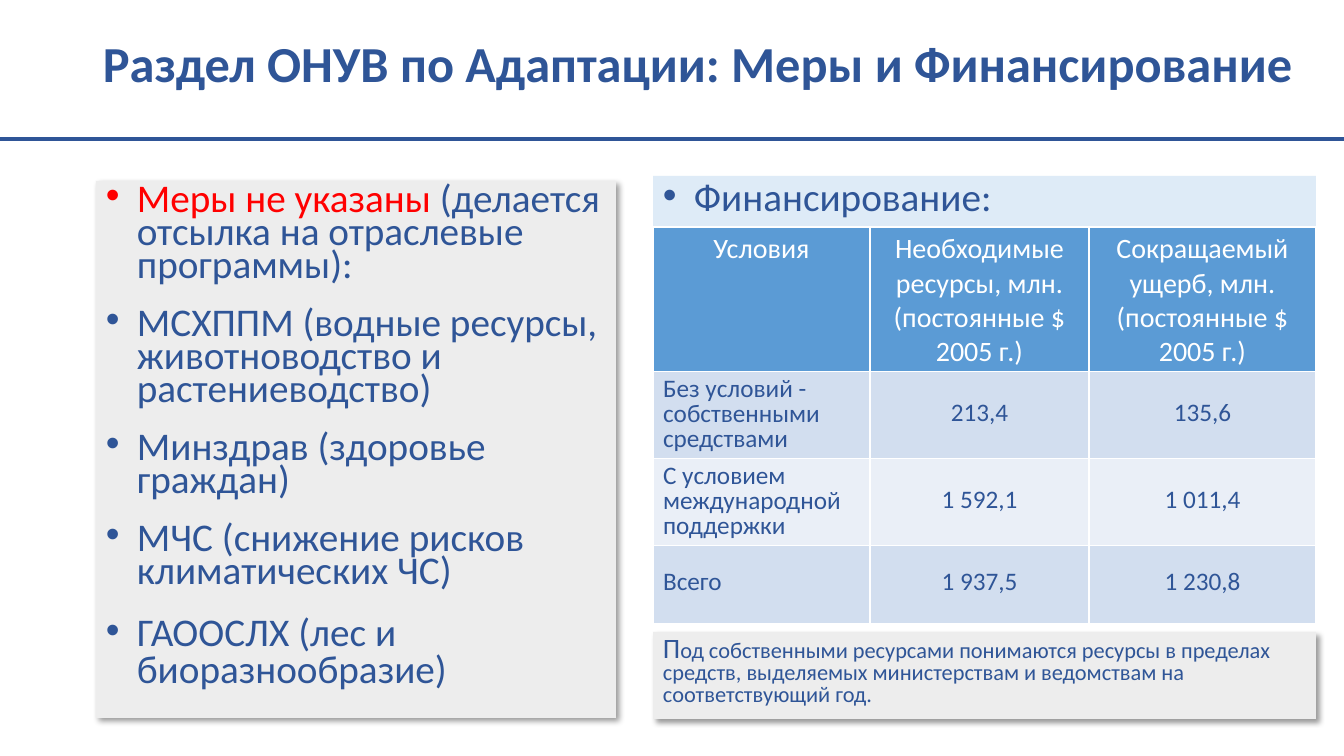
from dataclasses import dataclass

from lxml.etree import SubElement
from pptx import Presentation
from pptx.dml.color import RGBColor
from pptx.enum.shapes import MSO_CONNECTOR, MSO_SHAPE
from pptx.enum.text import MSO_ANCHOR, PP_ALIGN
from pptx.oxml.ns import qn
from pptx.util import Pt

WIDTH, HEIGHT = 1344, 756
SCALE = 12192000 / WIDTH


@dataclass(frozen=True)
class Theme:
    font: str = "Calibri"
    navy: str = "2F5597"
    red: str = "FF0000"
    white: str = "FFFFFF"
    panel: str = "EDEDED"
    label: str = "DEEBF7"
    header: str = "5B9BD5"
    bands: tuple = ("D2DEEF", "EAEFF7")
    title_size: int = 36
    body_size: int = 28
    header_size: int = 20
    cell_size: int = 18
    note_size: int = 16


def px(length):
    return round(length * SCALE)


def rgb(value):
    return RGBColor.from_string(value)


class SlideBuilder:
    def __init__(self, slide, theme):
        self.slide = slide
        self.theme = theme

    def fill_paragraph(self, para, spans, line_spacing=1.0, before=0, after=0,
                       align=PP_ALIGN.LEFT, bullet=False):
        """Fill a paragraph; each span is (text, size, color, bold)."""
        para.alignment = align
        para.line_spacing = line_spacing
        para.space_before, para.space_after = Pt(before), Pt(after)
        if bullet:
            properties = para._p.get_or_add_pPr()
            properties.set("marL", str(px(31)))
            properties.set("indent", str(px(-31)))
            SubElement(properties, qn("a:buFont"), typeface="Arial")
            SubElement(properties, qn("a:buChar"), char="•")
        for text, size, color, bold in spans:
            span = para.add_run()
            span.text = text
            span.font.name = self.theme.font
            span.font.size = Pt(size)
            span.font.bold = bold
            span.font.color.rgb = rgb(color)

    def title(self, left, top, width, height, text):
        box = self.slide.shapes.add_textbox(px(left), px(top), px(width), px(height))
        frame = box.text_frame
        frame.word_wrap = True
        frame.vertical_anchor = MSO_ANCHOR.MIDDLE
        span = (text, self.theme.title_size, self.theme.navy, True)
        self.fill_paragraph(frame.paragraphs[0], [span], line_spacing=0.9)

    def panel(self, left, top, width, height, fill, paragraphs, shadow=False):
        """Draw a filled box; each paragraph is (spans, format options)."""
        box = self.slide.shapes.add_shape(
            MSO_SHAPE.RECTANGLE, px(left), px(top), px(width), px(height))
        box.fill.solid()
        box.fill.fore_color.rgb = rgb(fill)
        box.line.fill.background()
        box.shadow.inherit = False
        if shadow:
            effects = box._element.spPr.find(qn("a:effectLst"))
            outer = SubElement(effects, qn("a:outerShdw"), blurRad=str(Pt(4)),
                               dist=str(Pt(3)), dir="2700000", algn="tl", rotWithShape="0")
            color = SubElement(outer, qn("a:srgbClr"), val="000000")
            SubElement(color, qn("a:alpha"), val="40000")
        frame = box.text_frame
        frame.word_wrap = True
        frame.vertical_anchor = MSO_ANCHOR.TOP
        for index, (spans, options) in enumerate(paragraphs):
            para = frame.add_paragraph() if index else frame.paragraphs[0]
            self.fill_paragraph(para, spans, **options)

    def rule(self, y, weight):
        line = self.slide.shapes.add_connector(
            MSO_CONNECTOR.STRAIGHT, 0, px(y), px(WIDTH), px(y))
        line.line.color.rgb = rgb(self.theme.navy)
        line.line.width = Pt(weight)
        SubElement(line._element.spPr, qn("a:effectLst"))

    def cell_borders(self, cell):
        properties = cell._tc.get_or_add_tcPr()
        for index, side in enumerate(("lnL", "lnR", "lnT", "lnB")):
            edge = SubElement(properties, qn(f"a:{side}"), w=str(Pt(1)))
            fill = SubElement(edge, qn("a:solidFill"))
            SubElement(fill, qn("a:srgbClr"), val=self.theme.white)
            properties.insert(index, edge)

    def table(self, left, top, widths, heights, rows):
        theme = self.theme
        table = self.slide.shapes.add_table(
            len(rows), len(widths), px(left), px(top),
            px(sum(widths)), px(sum(heights))).table
        for column, width in zip(table.columns, widths):
            column.width = px(width)
        for row, height in zip(table.rows, heights):
            row.height = px(height)
        for r, texts in enumerate(rows):
            for c, text in enumerate(texts):
                cell = table.cell(r, c)
                header = r == 0
                cell.fill.solid()
                cell.fill.fore_color.rgb = rgb(
                    theme.header if header else theme.bands[(r - 1) % 2])
                cell.vertical_anchor = MSO_ANCHOR.TOP if header else MSO_ANCHOR.MIDDLE
                self.cell_borders(cell)
                size = theme.header_size if header else theme.cell_size
                color = theme.white if header else theme.navy
                self.fill_paragraph(
                    cell.text_frame.paragraphs[0], [(text, size, color, False)],
                    line_spacing=1.0 if header else 0.7 if c or r == 3 else 0.8,
                    align=PP_ALIGN.CENTER if header or c else PP_ALIGN.LEFT)


def main():
    deck = Presentation()
    deck.slide_width, deck.slide_height = px(WIDTH), px(HEIGHT)
    theme = Theme()
    page = SlideBuilder(deck.slides.add_slide(deck.slide_layouts[6]), theme)

    def body(text, color=theme.navy):
        return (text, theme.body_size, color, False)

    # Heading and rule
    page.title(93, 15, 1224, 103, "Раздел ОНУВ по Адаптации: Меры и Финансирование")
    page.rule(139, 3)

    # Measures on the left
    measures = [
        [body("Меры не указаны ", theme.red),
         body("(делается отсылка на отраслевые программы):")],
        [body("МСХППМ (водные ресурсы, животноводство и растениеводство)")],
        [body("Минздрав (здоровье граждан)")],
        [body("МЧС (снижение рисков климатических ЧС)")],
    ]
    tight = dict(line_spacing=0.7, after=18, bullet=True)
    last = ([body("ГАООСЛХ (лес и биоразнообразие)")], dict(line_spacing=0.8, bullet=True))
    page.panel(96, 181, 520, 537, theme.panel,
               [(spans, tight) for spans in measures] + [last], shadow=True)

    # Financing on the right
    page.panel(653, 176, 663, 50, theme.label,
               [([body("Финансирование:")], dict(line_spacing=0.8, after=18, bullet=True))])
    page.table(653, 227, (217, 219, 227), (136, 87, 87, 78), [
        ("Условия", "Необходимые ресурсы, млн. (постоянные $ 2005 г.)",
         "Сокращаемый ущерб, млн. (постоянные $ 2005 г.)"),
        ("Без условий - собственными средствами", "213,4", "135,6"),
        ("С условием международной поддержки", "1 592,1", "1 011,4"),
        ("Всего", "1 937,5", "1 230,8"),
    ])

    # Note under the table
    note = [("П", theme.header_size, theme.navy, False),
            ("од собственными ресурсами понимаются ресурсы в пределах средств, "
             "выделяемых министерствам и ведомствам на соответствующий год.",
             theme.note_size, theme.navy, False)]
    page.panel(653, 632, 663, 87, theme.panel,
               [(note, dict(line_spacing=0.8, before=6, after=6))], shadow=True)

    deck.save("out.pptx")


if __name__ == "__main__":
    main()
